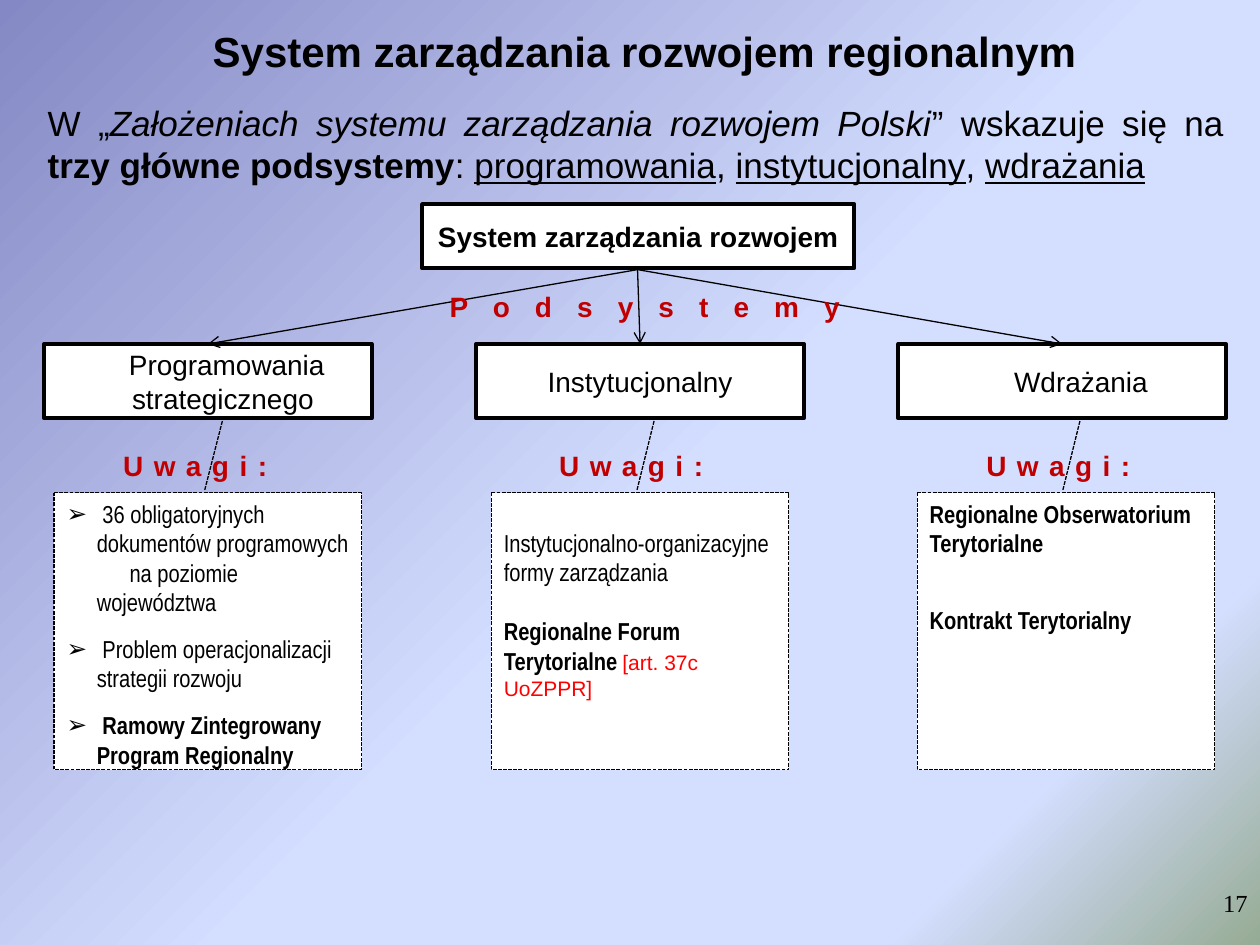
from lxml.etree import SubElement
from pptx import Presentation
from pptx.dml.color import RGBColor as RGB
from pptx.enum.dml import MSO_LINE
from pptx.enum.shapes import MSO_CONNECTOR as CONN, MSO_SHAPE as SHAPE
from pptx.enum.text import MSO_ANCHOR as ANCHOR, PP_ALIGN as ALIGN
from pptx.oxml.ns import qn
from pptx.util import Inches, Pt

THEME = dict(
    black=RGB(0, 0, 0), white=RGB(255, 255, 255), label=RGB(0xC0, 0, 0), red=RGB(255, 0, 0),
    font="Arial", narrow="Arial Narrow", serif="Times New Roman",
    title=24, intro=20, box=16, note=14, small=12,
    stops=[(0, "8488C4"), (53, "D4DEFF"), (83, "D4DEFF"), (100, "96AB94")],
)

prs = Presentation()
prs.slide_width, prs.slide_height = Inches(10), Inches(7.5)
s = prs.slides.add_slide(prs.slide_layouts[6])
COL, ROW = prs.slide_width / 100, prs.slide_height / 75  # grid of 100 x 75


def add_box(x, y, w, h, kind=None, line=0.75):
    """Add a text box, or a white outlined shape, at grid columns and rows."""
    area = [int(v) for v in (x * COL, y * ROW, w * COL, h * ROW)]
    if kind is None:
        sp = s.shapes.add_textbox(*area)
    else:
        sp = s.shapes.add_shape(kind, *area)
        sp.shadow.inherit = False
        sp.fill.solid()
        sp.fill.fore_color.rgb = THEME["white"]
        sp.line.color.rgb = THEME["black"]
        sp.line.width = Pt(line)
    sp.text_frame.word_wrap = True
    return sp


def add_par(sp, runs, size, align=ALIGN.LEFT, font="font", color="black",
            before=0, after=0, spacing=0):
    """Write one paragraph; each run is (text, dict of font settings)."""
    tf = sp.text_frame
    p = tf.paragraphs[0] if not tf.text else tf.add_paragraph()
    p.alignment, p.space_before, p.space_after = align, Pt(before), Pt(after)
    for text, style in runs:
        r = p.add_run()
        r.text = text
        f = r.font
        f.size = Pt(THEME[style.get("size", size)])
        f.name = THEME[style.get("font", font)]
        f.color.rgb = THEME[style.get("color", color)]
        f.bold, f.italic = style.get("b", False), style.get("i", False)
        f.underline = style.get("u", False)
        if spacing:
            r._r.get_or_add_rPr().set("spc", str(spacing * 100))
    return p


BOLD, UNDER, PLAIN = {"b": True}, {"u": True}, {}

# Background gradient
fill = s.background.fill
fill.gradient()
fill.gradient_angle = 315
stops = s.element.find(".//" + qn("a:gsLst"))
for old in list(stops):
    stops.remove(old)
for pos, color in THEME["stops"]:
    gs = SubElement(stops, qn("a:gs"), pos=str(pos * 1000))
    SubElement(gs, qn("a:srgbClr"), val=color)

# Title, page number and introduction
title = add_box(5.1, 1.3, 92.1, 5.2)
title.text_frame.vertical_anchor = ANCHOR.BOTTOM
p = add_par(title, [("System zarządzania rozwojem regionalnym", BOLD)], "title", ALIGN.CENTER)
p.line_spacing = 0.85
add_par(add_box(79.2, 70, 20.8, 5), [("17", PLAIN)], "note", ALIGN.RIGHT, "serif")
add_par(add_box(2.8, 7.6, 95.3, 7.7), [
    ("W „", PLAIN), ("Założeniach systemu zarządzania rozwojem Polski", {"i": True}),
    ("” wskazuje się na ", PLAIN), ("trzy główne podsystemy", BOLD), (": ", PLAIN),
    ("programowania", UNDER), (", ", PLAIN), ("instytucjonalny", UNDER), (", ", PLAIN),
    ("wdrażania", UNDER)], "intro", ALIGN.JUSTIFY, before=4)

# System box and its three subsystems: left, text, left and right inset, arrow end
system = add_box(33.5, 16.2, 34.3, 5.1, SHAPE.RECTANGLE, 2.25)
system.text_frame.vertical_anchor = ANCHOR.MIDDLE
add_par(system, [("System zarządzania rozwojem", BOLD)], "box", ALIGN.CENTER, after=10)

SUBSYSTEMS = [
    (3.5, "Programowania strategicznego ", 5, 2, 16.5),
    (37.8, "Instytucjonalny", 1, 1, 50.8),
    (71.3, "Wdrażania ", 6, 2.4, 84.3),
]
for x, name, left, right, tip in SUBSYSTEMS:
    box = add_box(x, 27.3, 26, 5.9, SHAPE.RECTANGLE, 2.25)
    tf = box.text_frame
    tf.vertical_anchor = ANCHOR.MIDDLE
    tf.margin_left, tf.margin_right = int(left * COL), int(right * COL)
    add_par(box, [(name, PLAIN)], "box", ALIGN.CENTER, after=10)

    arrow = s.shapes.add_connector(
        CONN.STRAIGHT, int(50.6 * COL), int(21.4 * ROW), int(tip * COL), int(27.3 * ROW))
    arrow.line.color.rgb = THEME["black"]
    arrow.line.width = Pt(0.75)
    SubElement(arrow.line._get_or_add_ln(), qn("a:tailEnd"), type="arrow")
    SubElement(arrow._element.spPr, qn("a:effectLst"))

# Dashed callouts with remarks
notes = []
for x, w in [(4.3, 24.4), (39, 23.6), (72.8, 23.6)]:
    note = add_box(x, 39.1, w, 22, SHAPE.LINE_CALLOUT_1)
    note.line.dash_style = MSO_LINE.SQUARE_DOT
    note.text_frame.vertical_anchor = ANCHOR.TOP
    for i, value in enumerate((-0.01, 0.49, -0.27, 0.55)):
        note.adjustments[i] = value
    notes.append(note)
programming, institutional, implementation = notes

for text, style in [
    (" 36 obligatoryjnych \tdokumentów programowych \tna poziomie województwa", PLAIN),
    (" Problem operacjonalizacji \tstrategii rozwoju", PLAIN),
    (" Ramowy Zintegrowany \tProgram Regionalny", BOLD),
]:
    p = add_par(programming, [(text, style)], "note", font="narrow", after=10)
    pPr = p._p.get_or_add_pPr()
    pPr.set("marL", str(Inches(0.24)))
    pPr.set("indent", str(-Inches(0.24)))
    SubElement(pPr, qn("a:buFont"), typeface="Arial")
    SubElement(pPr, qn("a:buChar"), char="➢")

institutional.text_frame.margin_top = int(2.8 * ROW)
add_par(institutional, [("Instytucjonalno-organizacyjne formy zarządzania", PLAIN)],
        "note", font="narrow")
add_par(institutional, [
    ("Regionalne Forum Terytorialne", BOLD), (" ", {"size": "small"}),
    ("[art. 37c UoZPPR]", {"size": "small", "font": "font", "color": "red"})],
    "note", font="narrow", before=17)

add_par(implementation, [("Regionalne Obserwatorium Terytorialne", BOLD)], "note", font="narrow")
add_par(implementation, [("Kontrakt Terytorialny", BOLD)], "note", font="narrow", before=27)

# Red spaced labels
for x, y, w, text, spacing in [
    (33.5, 22.5, 35.4, "P o d s y s t e m y", 5),
    (8.3, 35.1, 14.4, "Uwagi:", 6),
    (42.9, 35.1, 14.4, "Uwagi:", 6),
    (76.8, 35.1, 14.4, "Uwagi:", 6),
]:
    label = add_box(x, y, w, 3.7)
    label.text_frame.word_wrap = spacing == 5
    add_par(label, [(text, BOLD)], "box", ALIGN.CENTER, color="label", before=3, spacing=spacing)

prs.save("out.pptx")
